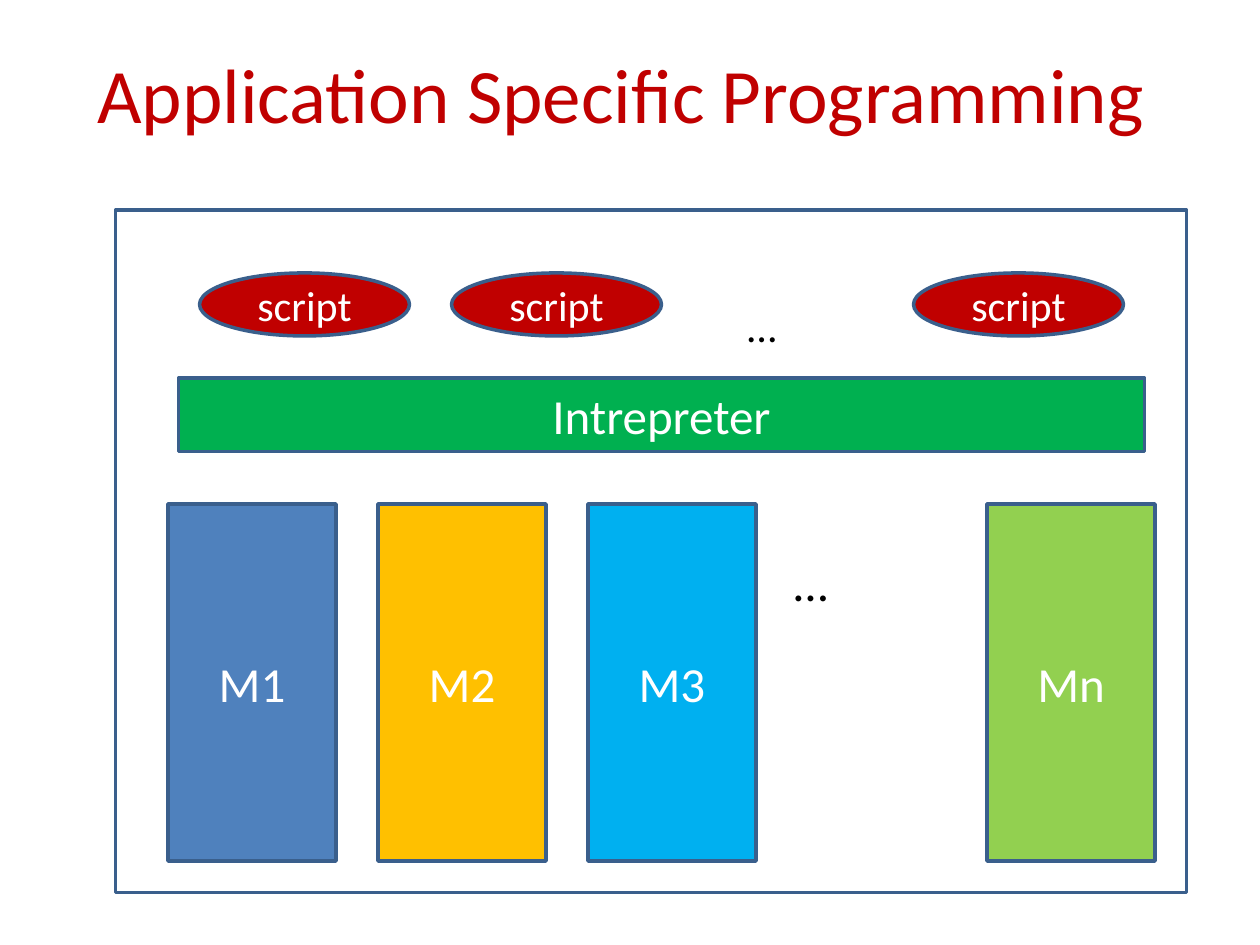
from dataclasses import dataclass

from pptx import Presentation
from pptx.dml.color import RGBColor
from pptx.enum.shapes import MSO_SHAPE
from pptx.enum.text import MSO_ANCHOR, PP_ALIGN
from pptx.slide import Slide
from pptx.text.text import TextFrame
from pptx.util import Pt

RECTANGLE, OVAL = MSO_SHAPE.RECTANGLE, MSO_SHAPE.OVAL
TOP, MIDDLE = MSO_ANCHOR.TOP, MSO_ANCHOR.MIDDLE
LEFT, CENTER = PP_ALIGN.LEFT, PP_ALIGN.CENTER
FONT = "Calibri"
COLORS = {
    "red": "C00000",
    "outline": "3A5F8C",
    "blue": "4F81BD",
    "amber": "FFC000",
    "sky": "00B0F0",
    "green": "00B050",
    "lime": "92D050",
    "white": "FFFFFF",
    "black": "000000",
}


@dataclass(frozen=True)
class Box:
    left: float
    top: float
    width: float
    height: float


@dataclass(frozen=True)
class Block:
    box: Box
    text: str = ""
    fill: str | None = None
    size: int = 28
    kind: MSO_SHAPE = RECTANGLE


@dataclass(frozen=True)
class Label:
    box: Box
    text: str
    size: int
    color: str = "black"
    align: PP_ALIGN = LEFT
    anchor: MSO_ANCHOR = TOP
    wrap: bool = False


def color(name: str) -> RGBColor:
    return RGBColor.from_string(COLORS[name])


def lengths(box: Box) -> tuple[Pt, Pt, Pt, Pt]:
    return Pt(box.left), Pt(box.top), Pt(box.width), Pt(box.height)


def write(frame: TextFrame, text: str, size: int, color_name: str,
          align: PP_ALIGN, anchor: MSO_ANCHOR) -> None:
    frame.vertical_anchor = anchor
    paragraph = frame.paragraphs[0]
    paragraph.text = text
    paragraph.alignment = align
    paragraph.font.name = FONT
    paragraph.font.size = Pt(size)
    paragraph.font.color.rgb = color(color_name)


def draw_block(slide: Slide, block: Block) -> None:
    shape = slide.shapes.add_shape(block.kind, *lengths(block.box))
    shape.shadow.inherit = False
    shape.line.color.rgb = color("outline")
    shape.line.width = Pt(2)
    if block.fill:
        shape.fill.solid()
        shape.fill.fore_color.rgb = color(block.fill)
    else:
        shape.fill.background()
    if block.text:
        write(shape.text_frame, block.text, block.size, "white", CENTER, MIDDLE)


def draw_label(slide: Slide, label: Label) -> None:
    frame = slide.shapes.add_textbox(*lengths(label.box)).text_frame
    frame.word_wrap = label.wrap
    write(frame, label.text, label.size, label.color, label.align, label.anchor)


def module(left: float, text: str, fill: str) -> Block:
    return Block(Box(left, 288, 96, 204), text, fill)


def script(left: float) -> Block:
    return Block(Box(left, 156, 120, 36), "script", "red", 24, OVAL)


BLOCKS = [
    Block(Box(66, 120, 612, 390)),
    module(96, "M1", "blue"),
    module(216, "M2", "amber"),
    module(336, "M3", "sky"),
    Block(Box(102, 216, 552, 42), "Intrepreter", "green"),
    module(564, "Mn", "lime"),
    script(114),
    script(258),
    script(522),
]
LABELS = [
    Label(Box(36, 21.6, 648, 62.6), "Application Specific Programming ",
          44, "red", CENTER, MIDDLE, True),
    Label(Box(420, 168, 31.5, 36), "…", 24),
    Label(Box(446.5, 312, 34, 41), "…", 28),
]


def main() -> None:
    """Build the slide of scripts, interpreter and modules."""
    presentation = Presentation()
    presentation.slide_width = Pt(720)
    presentation.slide_height = Pt(540)
    slide = presentation.slides.add_slide(presentation.slide_layouts[6])
    for block in BLOCKS:
        draw_block(slide, block)
    for label in LABELS:
        draw_label(slide, label)
    presentation.save("out.pptx")


if __name__ == "__main__":
    main()
